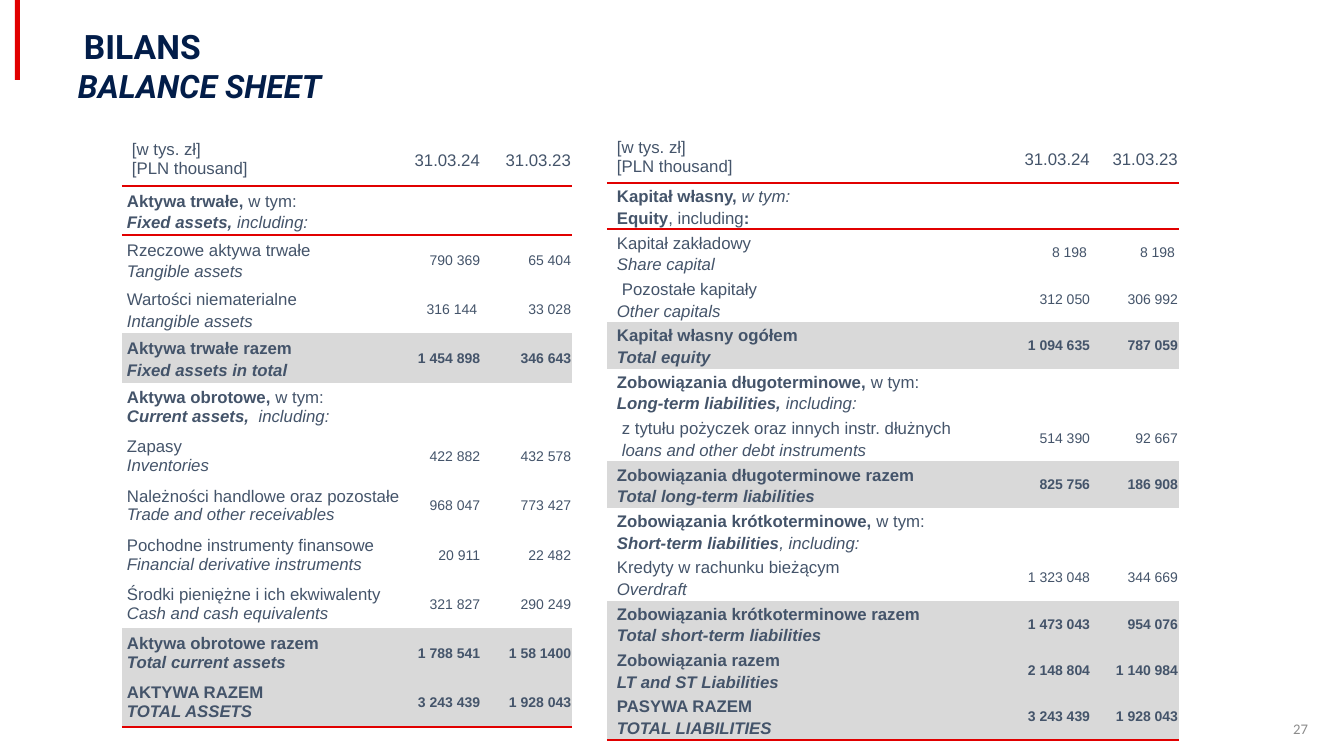
from lxml import etree
from pptx import Presentation
from pptx.dml.color import RGBColor
from pptx.enum.shapes import MSO_SHAPE
from pptx.enum.text import MSO_ANCHOR, PP_ALIGN
from pptx.oxml.ns import qn
from pptx.util import Emu, Pt

LEFT, RIGHT = PP_ALIGN.LEFT, PP_ALIGN.RIGHT
MIDDLE = MSO_ANCHOR.MIDDLE
RECTANGLE = MSO_SHAPE.RECTANGLE
PLAIN_TABLE = "{2D5ABB26-0587-4C30-8999-92F81FD0307C}"
COLORS = {"red": "E10000", "navy": "021D49", "slate": "44546A",
          "band": "D9D9D9", "gray": "8C8C8C"}

# Content: each row is (kind, Polish label, English label, 2024, 2023).
# A heading label is a list of (text, style); b is bold, i is italic.
HEADER = ("header", "[w tys. zł]", "[PLN thousand]", "31.03.24", "31.03.23")
ASSETS = [
    HEADER,
    ("heading", [("Aktywa trwałe, ", "b"), ("w tym:", "")],
     [("Fixed assets, ", "bi"), ("including:", "i")], "", ""),
    ("item", "Rzeczowe aktywa trwałe", "Tangible assets", "790 369", "65 404"),
    ("item", "Wartości niematerialne", "Intangible assets", "316 144", "33 028"),
    ("total", "Aktywa trwałe razem", "Fixed assets in total", "1 454 898", "346 643"),
    ("heading", [("Aktywa obrotowe, ", "b"), ("w tym:", "")],
     [("Current assets, ", "bi"), (" including:", "i")], "", ""),
    ("item", "Zapasy", "Inventories", "422 882", "432 578"),
    ("item", "Należności handlowe oraz pozostałe", "Trade and other receivables",
     "968 047", "773 427"),
    ("item", "Pochodne instrumenty finansowe", "Financial derivative instruments",
     "20 911", "22 482"),
    ("item", "Środki pieniężne i ich ekwiwalenty", "Cash and cash equivalents",
     "321 827", "290 249"),
    ("total", "Aktywa obrotowe razem", "Total current assets", "1 788 541", "1 58 1400"),
    ("total", "AKTYWA RAZEM", "TOTAL ASSETS", "3 243 439", "1 928 043"),
]
LIABILITIES = [
    HEADER,
    ("heading", [("Kapitał własny, ", "b"), ("w tym:", "i")],
     [("Equity", "b"), (", including", ""), (":", "b")], "", ""),
    ("item", "Kapitał zakładowy", "Share capital", "8 198", "8 198"),
    ("item", "Pozostałe kapitały", "Other capitals", "312 050", "306 992"),
    ("total", "Kapitał własny ogółem", "Total equity", "1 094 635", "787 059"),
    ("heading", [("Zobowiązania długoterminowe, ", "b"), ("w tym:", "")],
     [("Long-term liabilities, ", "bi"), ("including:", "i")], "", ""),
    ("item", "z tytułu pożyczek oraz innych instr. dłużnych",
     "loans and other debt instruments", "514 390", "92 667"),
    ("total", "Zobowiązania długoterminowe razem", "Total long-term liabilities",
     "825 756", "186 908"),
    ("heading", [("Zobowiązania krótkoterminowe, ", "b"), ("w tym:", "")],
     [("Short-term liabilities", "bi"), (", including:", "i")], "", ""),
    ("item", "Kredyty w rachunku bieżącym", "Overdraft", "1 323 048", "344 669"),
    ("total", "Zobowiązania krótkoterminowe razem", "Total short-term liabilities",
     "1 473 043", "954 076"),
    ("total", "Zobowiązania razem", "LT and ST Liabilities", "2 148 804", "1 140 984"),
    ("total", "PASYWA RAZEM", "TOTAL LIABILITIES", "3 243 439", "1 928 043"),
]
# Layout in px; "loose" counts the body rows with wider line spacing
TABLES = [
    {"rows": ASSETS, "left": 122, "columns": (288, 71, 91), "header": 54,
     "inset": 5, "loose": 4},
    {"rows": LIABILITIES, "left": 607, "columns": (383, 101, 88), "header": 51,
     "inset": 10, "loose": 12},
]
TABLE_TOP, TABLE_HEIGHT = 132, 595
LABEL_INDENTS = {"Pozostałe kapitały": 5,
                 "z tytułu pożyczek oraz innych instr. dłużnych": 5,
                 "loans and other debt instruments": 5}
VALUE_INSETS = {"316 144": 4, "8 198": 4}
LABEL_STYLES = {"header": ("", ""), "item": ("", "i"), "total": ("b", "bi")}
# Text boxes: text, position, size, font, color, style, alignment, line spacing
TEXTS = [
    ("BILANS", (74, 20, 1235, 58), 24, "Roboto", "navy", "b", LEFT, 0.9),
    ("BALANCE SHEET", (68, 59, 1235, 58), 23, "Roboto", "navy", "bi", LEFT, 0.9),
    ("27", (960, 709, 358, 40), 10.5, "Calibri", "gray", "", RIGHT, 1),
]


def px(value):
    return Emu(round(value * 914400 / 100.8))


def color(name):
    return RGBColor.from_string(COLORS[name])


def style_paragraph(para, size, font, color_name, align, spacing):
    para.alignment, para.line_spacing = align, spacing
    para.font.size, para.font.name = Pt(size), font
    para.font.color.rgb = color(color_name)


def add_spans(para, spans):
    for text, style in spans:
        span = para.add_run()
        span.text = text
        span.font.bold, span.font.italic = "b" in style, "i" in style


def set_margins(frame, left, top, right, bottom):
    frame.margin_left, frame.margin_top = px(left), px(top)
    frame.margin_right, frame.margin_bottom = px(right), px(bottom)


def add_border(cell, side):
    line = etree.Element(qn(f"a:ln{side}"), w=str(Pt(1.5)))
    fill = etree.SubElement(line, qn("a:solidFill"))
    etree.SubElement(fill, qn("a:srgbClr"), val=COLORS["red"])
    cell._tc.get_or_add_tcPr().insert(0, line)


def fill_label(cell, kind, labels, inset, spacing):
    if kind == "header":
        set_margins(cell, 10, 5, 10, 5)
    else:
        set_margins(cell, inset, 0, 5, 0)
    frame = cell.text_frame
    for index, label in enumerate(labels):
        para = frame.add_paragraph() if index else frame.paragraphs[0]
        if kind == "heading":
            spans = label
        else:
            spans = [(label, LABEL_STYLES[kind][index])]
            if label in LABEL_INDENTS:
                para._p.get_or_add_pPr().set("marL", str(px(LABEL_INDENTS[label])))
        style_paragraph(para, 12, "Arial", "slate", LEFT, spacing)
        add_spans(para, spans)


def fill_value(cell, kind, value):
    set_margins(cell, 1, 1, VALUE_INSETS.get(value, 1), 0)
    para = cell.text_frame.paragraphs[0]
    is_header = kind == "header"
    style_paragraph(para, 12 if is_header else 10, "Arial", "slate", RIGHT,
                    1.15 if is_header else 1)
    if value:
        add_spans(para, [(value, "b" if kind == "total" else "")])


def add_balance_table(page, layout):
    rows, columns = layout["rows"], layout["columns"]
    graphic = page.shapes.add_table(len(rows), 3, px(layout["left"]), px(TABLE_TOP),
                                    px(sum(columns)), px(TABLE_HEIGHT))
    table = graphic.table
    table._tbl.tblPr.find(qn("a:tableStyleId")).text = PLAIN_TABLE
    table.horz_banding = table.first_row = False
    for column, width in zip(table.columns, columns):
        column.width = px(width)
    body_height = (TABLE_HEIGHT - layout["header"]) / (len(rows) - 1)
    borders = {0: "B", 1: "T", len(rows) - 1: "B"}
    for number, (kind, polish, english, *values) in enumerate(rows):
        table.rows[number].height = px(body_height if number else layout["header"])
        cells = table.rows[number].cells
        spacing = 1.15 if 1 <= number <= layout["loose"] else 1
        fill_label(cells[0], kind, (polish, english), layout["inset"], spacing)
        for column, value in enumerate(values, 1):
            fill_value(cells[column], kind, value)
        for cell in cells:
            cell.vertical_anchor = MIDDLE
            if kind == "total":
                cell.fill.solid()
                cell.fill.fore_color.rgb = color("band")
            else:
                cell.fill.background()
            if number in borders:
                add_border(cell, borders[number])


def main():
    deck = Presentation()
    deck.slide_width, deck.slide_height = px(1344), px(756)
    page = deck.slides.add_slide(deck.slide_layouts[6])

    # Red accent bar
    bar = page.shapes.add_shape(RECTANGLE, px(15), 0, px(5), px(80))
    bar.shadow.inherit = False
    bar.fill.solid()
    bar.fill.fore_color.rgb = color("red")
    bar.line.fill.background()

    # Titles and page number
    for text, place, size, font, color_name, style, align, spacing in TEXTS:
        box = page.shapes.add_textbox(*map(px, place))
        frame = box.text_frame
        frame.word_wrap, frame.vertical_anchor = True, MIDDLE
        set_margins(frame, 10, 5, 10, 5)
        para = frame.paragraphs[0]
        style_paragraph(para, size, font, color_name, align, spacing)
        add_spans(para, [(text, style)])

    # Balance tables
    for layout in TABLES:
        add_balance_table(page, layout)

    deck.save("out.pptx")


if __name__ == "__main__":
    main()
